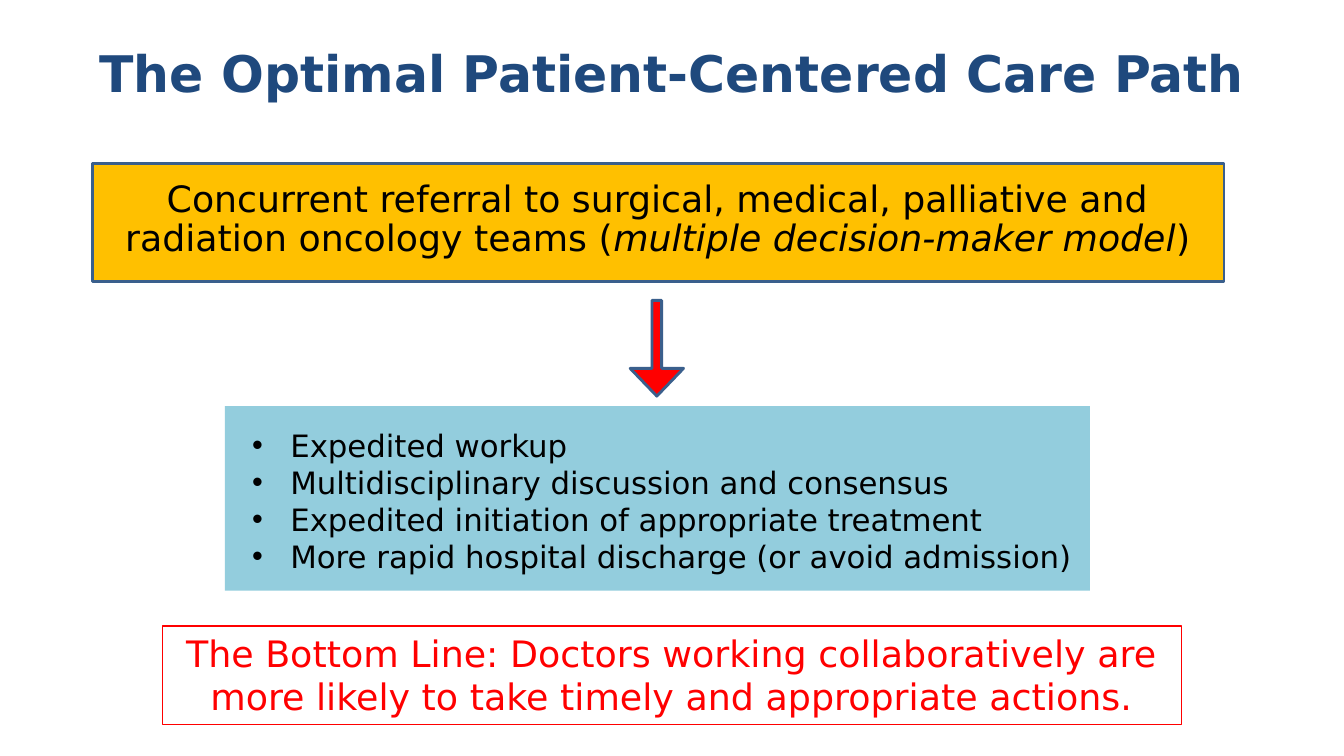
from lxml import etree
from pptx import Presentation
from pptx import util as u
from pptx.dml.color import RGBColor
from pptx.enum import shapes, text
from pptx.oxml import ns

FONT = "DejaVu Sans"
COLORS = {
    "navy": "1F497D",
    "outline": "3A5F8C",
    "gold": "FFC000",
    "aqua": "93CDDD",
    "red": "FF0000",
    "black": "000000",
}
OUTCOMES = [
    "Expedited workup",
    "Multidisciplinary discussion and consensus",
    "Expedited initiation of appropriate treatment",
    "More rapid hospital discharge (or avoid admission)",
]


def color(name):
    return RGBColor.from_string(COLORS[name])


def place(item, left, top, width, height):
    item.left, item.top = u.Inches(left), u.Inches(top)
    item.width, item.height = u.Inches(width), u.Inches(height)


def add_bullet(paragraph, indent):
    props = paragraph._p.get_or_add_pPr()
    props.set("marL", str(u.Inches(indent)))
    props.set("indent", str(-u.Inches(indent)))
    etree.SubElement(props, ns.qn("a:buFont")).set("typeface", "Arial")
    etree.SubElement(props, ns.qn("a:buChar")).set("char", "•")


def write(item, paragraphs, size, ink="black", bold=False, align=text.PP_ALIGN.CENTER,
          anchor=text.MSO_ANCHOR.TOP, spacing=1.0, bullet_indent=None):
    """Fill a shape; each paragraph is a list of (wording, italic) runs."""
    frame = item.text_frame
    frame.word_wrap = True
    frame.auto_size = text.MSO_AUTO_SIZE.NONE
    frame.vertical_anchor = anchor
    for index, runs in enumerate(paragraphs):
        paragraph = frame.add_paragraph() if index else frame.paragraphs[0]
        paragraph.alignment = align
        paragraph.line_spacing = spacing
        paragraph.space_before = u.Pt(0)
        if bullet_indent:
            add_bullet(paragraph, bullet_indent)
        for wording, italic in runs:
            run = paragraph.add_run()
            run.text = wording
            run.font.name, run.font.size = FONT, u.Pt(size)
            run.font.bold, run.font.italic = bold, italic
            run.font.color.rgb = color(ink)


def add_block(slide, kind, box, fill=None, line=None, line_width=2):
    block = slide.shapes.add_shape(kind, *map(u.Inches, box))
    block.shadow.inherit = False
    if fill:
        block.fill.solid()
        block.fill.fore_color.rgb = color(fill)
    else:
        block.fill.background()
    if line:
        block.line.color.rgb = color(line)
        block.line.width = u.Pt(line_width)
    else:
        block.line.fill.background()
    return block


def main():
    deck = Presentation()
    deck.slide_width, deck.slide_height = u.Inches(13.33), u.Inches(7.5)
    slide = deck.slides.add_slide(deck.slide_layouts[1])
    rectangle = shapes.MSO_SHAPE.RECTANGLE

    # Title
    title = slide.shapes.title
    place(title, 0, 0.01, 13.33, 1.41)
    write(title, [[("The Optimal Patient-Centered Care Path", False)]], 36,
          ink="navy", bold=True, anchor=text.MSO_ANCHOR.MIDDLE)

    # Referral step
    add_block(slide, rectangle, (0.92, 1.62, 11.22, 1.17), "gold", "outline")
    referral = slide.shapes.add_textbox(*map(u.Inches, (1.11, 1.75, 10.83, 0.98)))
    write(referral, [[
        ("Concurrent referral to surgical, medical, palliative and "
         "radiation oncology teams (", False),
        ("multiple decision-maker model", True),
        (")", False),
    ]], 25.9, spacing=0.9)

    # Outcomes, with the list brought in front of its panel
    add_block(slide, rectangle, (2.23, 4.03, 8.58, 1.83), "aqua")
    outcomes = slide.placeholders[1]
    outcomes.element.getparent().append(outcomes.element)
    place(outcomes, 2.4, 4.18, 9.03, 1.58)
    write(outcomes, [[(outcome, False)] for outcome in OUTCOMES], 22,
          align=text.PP_ALIGN.LEFT, bullet_indent=0.38)

    # Arrow from referral to outcomes
    arrow = add_block(slide, shapes.MSO_SHAPE.DOWN_ARROW,
                      (6.25, 2.98, 0.53, 0.95), "red", "outline")
    arrow.adjustments[0], arrow.adjustments[1] = 0.18, 0.52

    # Bottom line
    bottom_line = add_block(slide, rectangle, (1.61, 6.21, 10.11, 0.98),
                            line="red", line_width=1)
    write(bottom_line, [[("The Bottom Line: Doctors working collaboratively are more "
                          "likely to take timely and appropriate actions.", False)]],
          26, ink="red")

    deck.save("out.pptx")


if __name__ == "__main__":
    main()
